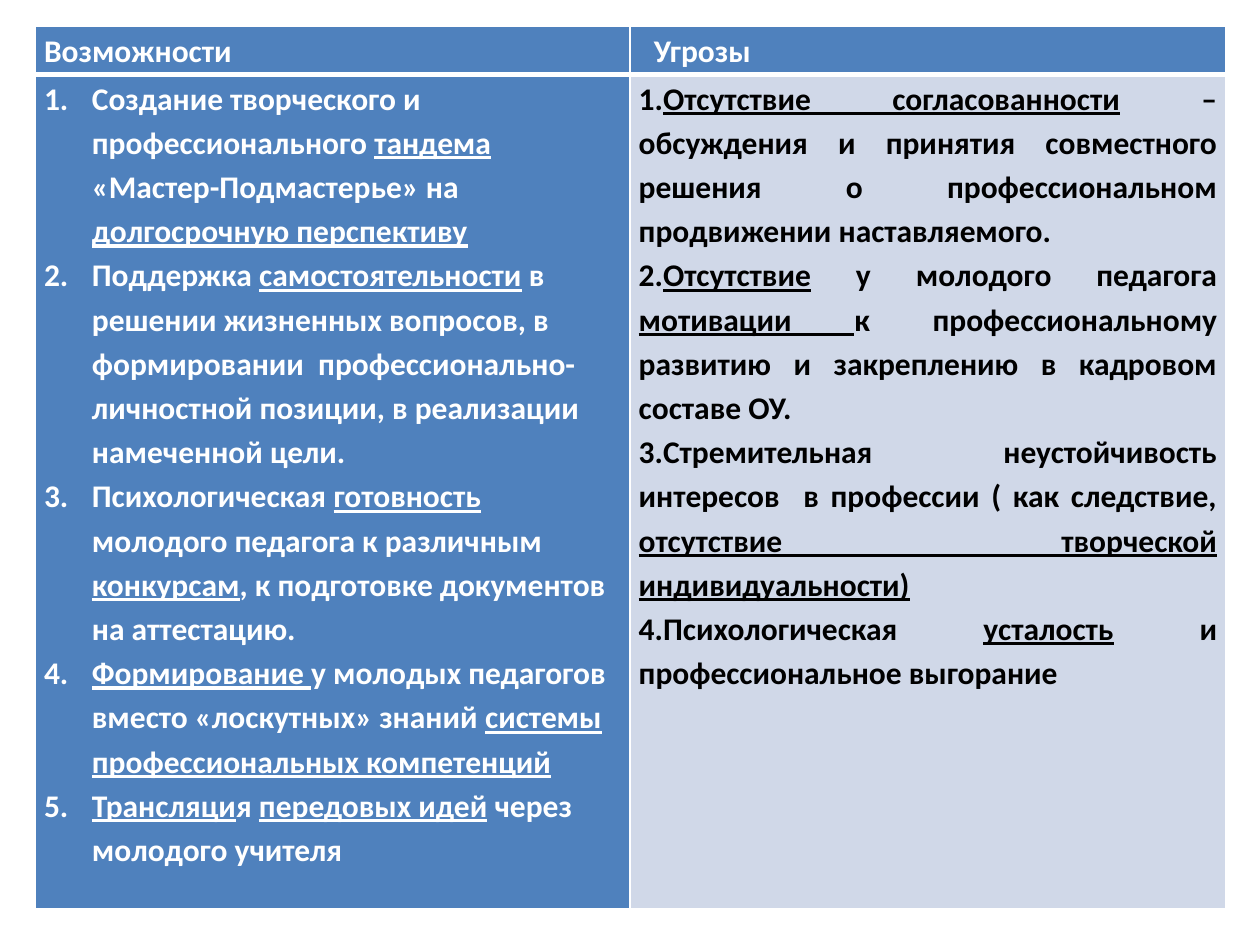
from lxml import etree
from pptx import Presentation, util as u
from pptx.dml.color import RGBColor
from pptx.enum import text
from pptx.oxml.ns import qn

THEME = {
    "font": "Calibri", "size": 18, "spacing": 1.15,
    "white": "FFFFFF", "black": "000000", "blue": "4F81BD", "pale": "D0D8E8",
    "thin": 1, "thick": 3,
}

# Underscores enclose underlined words.
OPPORTUNITIES = [
    "Создание творческого и профессионального _тандема _«Мастер-Подмастерье» на "
    "_долгосрочную перспективу_",
    "Поддержка _самостоятельности_ в решении жизненных вопросов, в формировании  "
    "профессионально-личностной позиции, в реализации намеченной цели.",
    "Психологическая _готовность _молодого педагога к различным _конкурсам_, "
    "к подготовке документов на аттестацию.",
    "_Формирование _у молодых педагогов вместо «лоскутных» знаний "
    "_системы профессиональных компетенций_",
    "_Трансляци_я _передовых идей_ через молодого учителя",
]
THREATS = [
    "1._Отсутствие согласованности_ – обсуждения и принятия совместного решения "
    "о профессиональном продвижении наставляемого.",
    "2._Отсутствие_ у молодого педагога _мотивации _к профессиональному развитию "
    "и закреплению в кадровом составе ОУ.",
    "3.Стремительная неустойчивость интересов  в профессии ( как следствие, "
    "_отсутствие творческой индивидуальности)_",
    "4.Психологическая _усталость_ и профессиональное выгорание",
]
CELLS = [
    [dict(lines=["Возможности"], fill="blue", color="white"),
     dict(lines=["Угрозы"], fill="blue", color="white", indent=0.12)],
    [dict(lines=OPPORTUNITIES, fill="blue", color="white", indent=0.38, numbered=True),
     dict(lines=THREATS, fill="pale", color="black", align=text.PP_ALIGN.JUSTIFY)],
]
LEFT, TOP = 0.28, 0.21
COLUMNS = [4.72, 4.73]
ROWS = [0.38, 6.62]


def rgb(name):
    return RGBColor.from_string(THEME[name])


def write_text(frame, lines, color, indent=0, numbered=False, align=text.PP_ALIGN.LEFT):
    for index, line in enumerate(lines):
        para = frame.add_paragraph() if index else frame.paragraphs[0]
        para.alignment = align
        para.line_spacing = THEME["spacing"]
        props = para._p.get_or_add_pPr()
        props.set("marL", str(u.Inches(indent)))
        props.set("indent", str(-u.Inches(indent) if numbered else 0))
        if numbered:
            etree.SubElement(props, qn("a:buFont"), typeface="+mj-lt")
            etree.SubElement(props, qn("a:buAutoNum"), type="arabicPeriod")
        for part, words in enumerate(line.split("_")):
            if words:
                span = para.add_run()
                span.text = words
                font = span.font
                font.name, font.size, font.bold = THEME["font"], u.Pt(THEME["size"]), True
                font.underline = part % 2 == 1
                font.color.rgb = rgb(color)


def set_borders(cell, **widths):
    props = cell._tc.get_or_add_tcPr()
    for place, (side, width) in enumerate(widths.items()):
        line = etree.Element(qn("a:ln" + side), w=str(u.Pt(width)))
        fill = etree.SubElement(line, qn("a:solidFill"))
        etree.SubElement(fill, qn("a:srgbClr"), val=THEME["white"])
        props.insert(place, line)


def main():
    deck = Presentation()
    deck.slide_width, deck.slide_height = u.Inches(10), u.Inches(7.5)
    page = deck.slides.add_slide(deck.slide_layouts[6])
    table = page.shapes.add_table(
        len(ROWS), len(COLUMNS), u.Inches(LEFT), u.Inches(TOP),
        u.Inches(sum(COLUMNS)), u.Inches(sum(ROWS))).table
    for column, width in zip(table.columns, COLUMNS):
        column.width = u.Inches(width)
    for row, height in zip(table.rows, ROWS):
        row.height = u.Inches(height)

    thin, thick = THEME["thin"], THEME["thick"]
    for r, contents in enumerate(CELLS):
        for c, content in enumerate(contents):
            cell = table.cell(r, c)
            cell.margin_left = cell.margin_right = u.Inches(0.07)
            cell.margin_top = cell.margin_bottom = 0
            options = dict(content)
            cell.fill.solid()
            cell.fill.fore_color.rgb = rgb(options.pop("fill"))
            set_borders(cell, L=thin, R=thin,
                        T=thick if r else thin, B=thin if r else thick)
            write_text(cell.text_frame, **options)
    deck.save("out.pptx")


if __name__ == "__main__":
    main()
